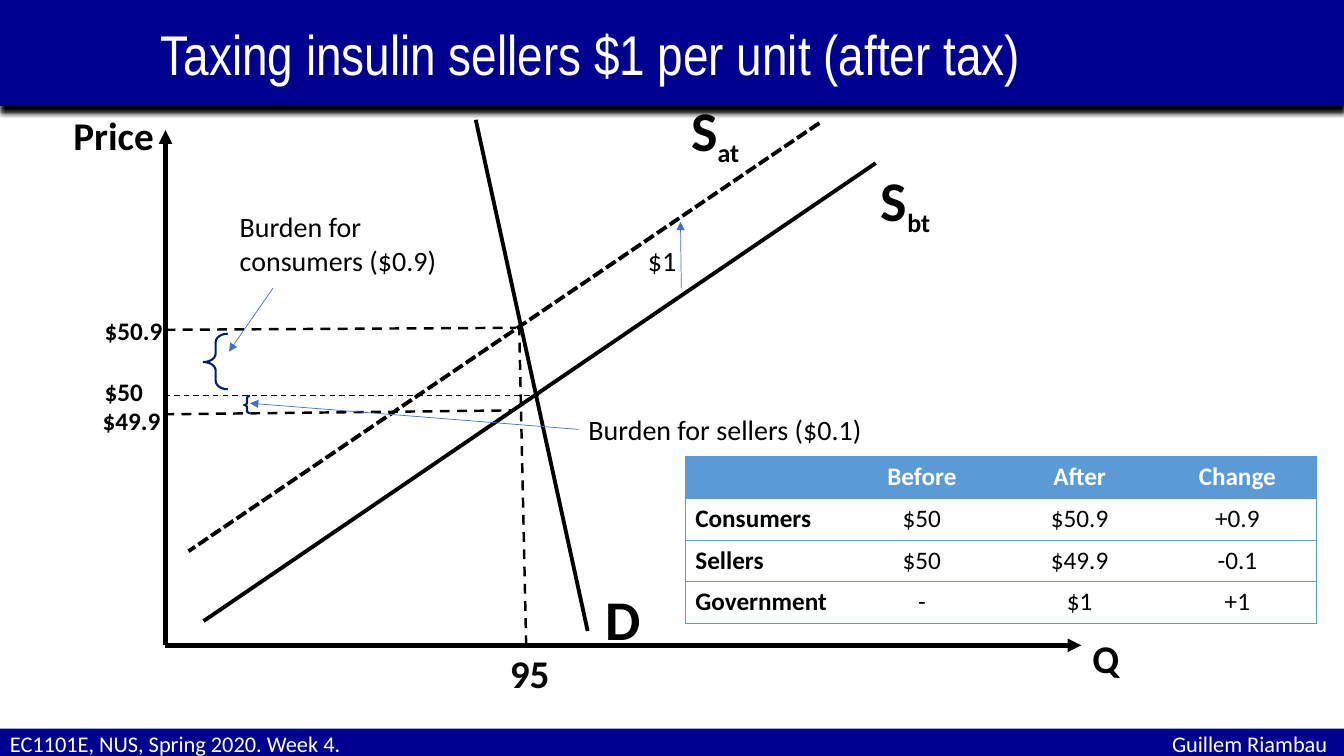
from lxml.etree import SubElement as Sub
from pptx import Presentation
from pptx.dml.color import RGBColor
from pptx.enum.dml import MSO_LINE as Dash
from pptx.enum.shapes import MSO_CONNECTOR as Link, MSO_SHAPE as Kind
from pptx.enum.text import MSO_ANCHOR as Anchor, MSO_AUTO_SIZE as Fit, PP_ALIGN as Align
from pptx.oxml.ns import qn
from pptx.util import Cm, Pt

BLACK, WHITE, NAVY, BLUE, INK, SKY = "000000", "FFFFFF", "000090", "4472C4", "002060", "5B9BD5"
WIDE, HIGH = 33.87, 19.05
LEFT, BASE = 4.17, 16.26

TITLE = "Taxing insulin sellers $1 per unit (after tax)"
FOOTER = "EC1101E, NUS, Spring 2020. Week 4.\tGuillem Riambau"

AXES = [(LEFT, BASE, LEFT, 3.28), (LEFT, BASE, 27.25, BASE)]
CURVES = [
    (14.81, 15.9, 11.99, 3.02, None),
    (5.13, 15.65, 22.07, 4.11, None),
    (20.65, 3.1, 4.75, 13.89, Dash.SQUARE_DOT),
]
GUIDES = [
    (13.26, BASE, 13.08, 8.05, 1.75),
    (LEFT, 8.31, 13, 8.26, 1.75),
    (4.14, 10.44, 12.98, 10.34, 1.75),
    (4.14, 9.96, 13.67, 9.96, 1),
]
ARROWS = [
    (17.17, 7.26, 17.15, 5.59),
    (6.88, 7.26, 5.77, 8.86),
    (14.58, 10.82, 6.3, 10.16),
]
BRACES = [(5.13, 8.41, 0.61, 1.4, 0.51), (6.15, 9.98, 0.15, 0.43, 0.53)]
LABELS = [
    ("Price", "", 1.6, 2.67, 3.86, 28, True),
    ("Q", "", 27.28, 15.85, 3.86, 28, True),
    ("95", "", 12.6, 16.23, 3.86, 28, True),
    ("D", "", 15.01, 14.61, 3.86, 40, True),
    ("S", "bt", 21.95, 4.04, 3.86, 40, True),
    ("S", "at", 17.17, 2.29, 3.86, 40, True),
    ("$50.9", "", 2.39, 7.82, 3.86, 18, True),
    ("$50", "", 2.39, 9.37, 3.86, 18, True),
    ("$49.9", "", 2.34, 10.08, 3.86, 18, True),
    ("$1", "", 16.08, 6.02, 3.86, 20, False),
    ("Burden for consumers ($0.9)", "", 5.79, 5.16, 6.81, 20, False),
    ("Burden for sellers ($0.1)", "", 14.58, 10.26, 9.65, 20, False),
]
ROWS = [
    ("", "Before", "After", "Change"),
    ("Consumers", "$50", "$50.9", "+0.9"),
    ("Sellers", "$50", "$49.9", "-0.1"),
    ("Government", "-", "$1", "+1"),
]


def tint(code):
    return RGBColor.from_string(code)


def write(frame, text, size=18, color=BLACK, bold=False, face="Calibri", align=Align.LEFT, sub=""):
    para = frame.paragraphs[0]
    para.alignment = align
    for part in filter(None, (text, sub)):
        run = para.add_run()
        run.text = part
        font = run.font
        font.name, font.size, font.bold = face, Pt(size), bold
        font.color.rgb = tint(color)
    if sub:
        font.size = Pt(32)
        font._element.set("baseline", "-25000")
    return para


def bar(top, tall):
    box = shapes.add_shape(Kind.RECTANGLE, 0, Cm(top), Cm(WIDE), Cm(tall))
    box.fill.solid()
    box.fill.fore_color.rgb = tint(NAVY)
    box.line.fill.background()
    box.shadow.inherit = False
    glow = Sub(box._element.spPr.find(qn("a:effectLst")), qn("a:outerShdw"),
               blurRad=str(Pt(4)), dist=str(Pt(4)), dir="5400000", rotWithShape="0")
    Sub(glow, qn("a:srgbClr"), val=BLACK)
    frame = box.text_frame
    frame.word_wrap = True
    frame.vertical_anchor = Anchor.MIDDLE
    return frame


def stroke(x1, y1, x2, y2, width, color=BLACK, dash=None, arrow=False):
    item = shapes.add_connector(Link.STRAIGHT, Cm(x1), Cm(y1), Cm(x2), Cm(y2))
    item.line.color.rgb = tint(color)
    item.line.width = Pt(width)
    if dash:
        item.line.dash_style = dash
    props = item._element.spPr
    if arrow:
        Sub(props.find(qn("a:ln")), qn("a:tailEnd"), type="triangle")
    Sub(props, qn("a:effectLst"))


def edge(cell, sides):
    props = cell._tc.get_or_add_tcPr()
    for side in "LRTB":
        line = Sub(props, qn("a:ln" + side), w=str(Pt(0.5)))
        if side in sides:
            Sub(Sub(line, qn("a:solidFill")), qn("a:srgbClr"), val=SKY)
        else:
            Sub(line, qn("a:noFill"))


def grid():
    table = shapes.add_table(4, 4, Cm(17.27), Cm(11.51), Cm(15.9), Cm(4.2)).table
    table.horz_banding = False
    for r, row in enumerate(ROWS):
        for c, text in enumerate(row):
            cell = table.cell(r, c)
            edge(cell, "TB" + ("L" if c == 0 else "R" if c == 3 else ""))
            if r == 0:
                cell.fill.solid()
                cell.fill.fore_color.rgb = tint(SKY)
            else:
                cell.fill.background()
            write(cell.text_frame, text, color=BLACK if r else WHITE, bold=r == 0 or c == 0,
                  align=Align.CENTER if c else Align.LEFT)


deck = Presentation()
deck.slide_width, deck.slide_height = Cm(WIDE), Cm(HIGH)
shapes = deck.slides.add_slide(deck.slide_layouts[6]).shapes

foot = bar(18.36, 0.76)
tabs = Sub(foot.paragraphs[0]._p.get_or_add_pPr(), qn("a:tabLst"))
Sub(tabs, qn("a:tab"), pos=str(Cm(33.2)), algn="r")
write(foot, FOOTER, size=16, color=WHITE)

head = bar(0, 2.67)
head.margin_left = Cm(4.05)
write(head, TITLE, size=40, color=WHITE, face="Arial Narrow")

for ends in AXES:
    stroke(*ends, 3.25, arrow=True)
for *ends, dash in CURVES:
    stroke(*ends, 2.75, dash=dash)
for *ends, width in GUIDES:
    stroke(*ends, width, dash=Dash.DASH)
for x, y, w, h, mid in BRACES:
    brace = shapes.add_shape(Kind.LEFT_BRACE, Cm(x), Cm(y), Cm(w), Cm(h))
    brace.adjustments[0], brace.adjustments[1] = 0.35, mid
    brace.fill.background()
    brace.line.color.rgb = tint(INK)
    brace.line.width = Pt(1.5)
    brace.shadow.inherit = False
for ends in ARROWS:
    stroke(*ends, 0.5, color=BLUE, arrow=True)
for text, sub, x, y, w, size, bold in LABELS:
    tall = size * 0.043 * (2 if text.startswith("Burden for c") else 1) + 0.25
    frame = shapes.add_textbox(Cm(x), Cm(y), Cm(w), Cm(tall)).text_frame
    frame.word_wrap = True
    frame.auto_size = Fit.SHAPE_TO_FIT_TEXT
    write(frame, text, size=size, bold=bold, sub=sub)
grid()

deck.save("out.pptx")
